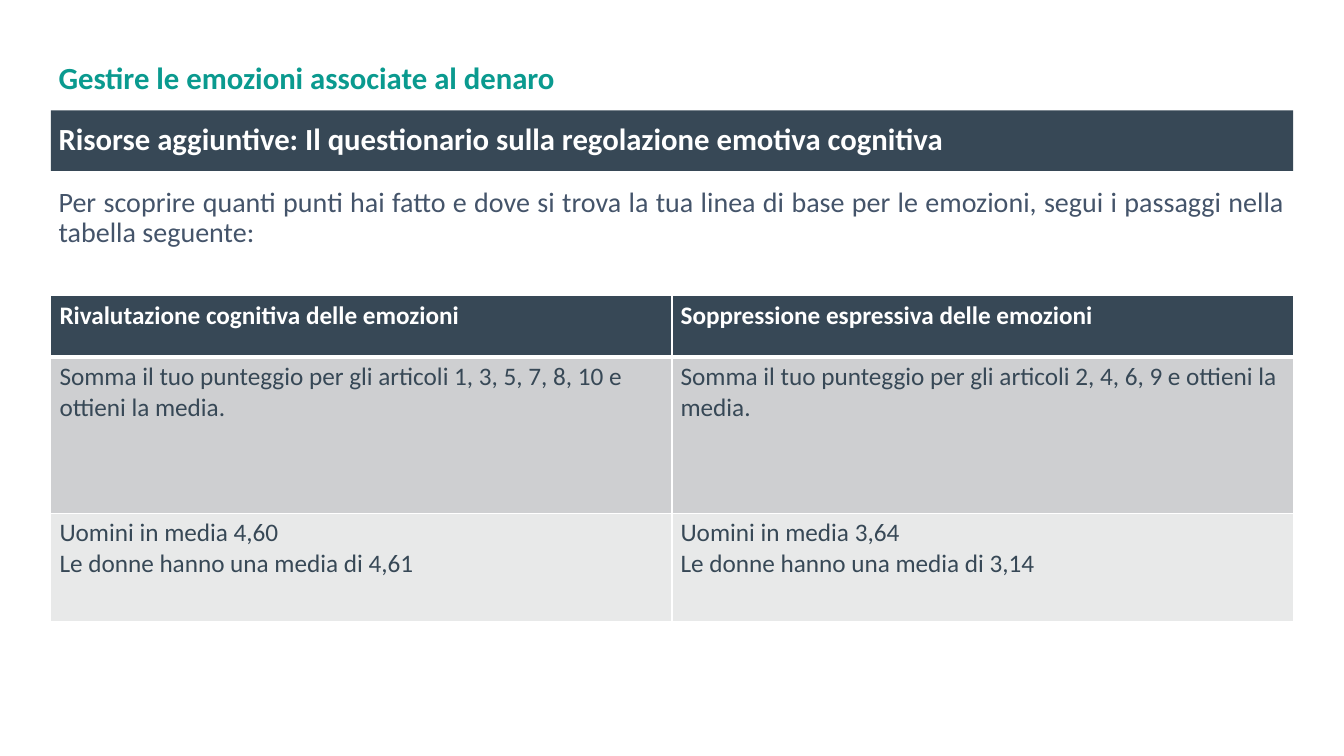
from dataclasses import dataclass
from typing import Optional

from lxml.etree import SubElement
from pptx import Presentation
from pptx.dml.color import RGBColor
from pptx.enum.shapes import MSO_SHAPE as Shape
from pptx.enum.text import MSO_ANCHOR as Anchor, PP_ALIGN as Align
from pptx.oxml.ns import qn
from pptx.util import Pt

PX = 9525
SLIDE_WIDTH, SLIDE_HEIGHT = 1400, 788
FONT = "Calibri"
WHITE = RGBColor(0xFF, 0xFF, 0xFF)
SLATE = RGBColor(0x37, 0x48, 0x56)
TEAL = RGBColor(0x0A, 0x9A, 0x8F)
BLUE_GREY = RGBColor(0x44, 0x54, 0x6A)
MID_GREY = RGBColor(0xCE, 0xCF, 0xD1)
LIGHT_GREY = RGBColor(0xE8, 0xE9, 0xE9)

LEFT, WIDTH = 53, 1294
TABLE_TOP = 308
BLOCK_MARGIN, CELL_MARGIN, MARGIN_Y = 8, 9, 5
CELL_SIZE = 19.7


@dataclass(frozen=True)
class TextStyle:
    size: float
    color: RGBColor
    bold: bool = False


@dataclass(frozen=True)
class Block:
    text: str
    top: int
    height: int
    style: TextStyle
    align: Align = Align.JUSTIFY
    anchor: Anchor = Anchor.MIDDLE
    fill: Optional[RGBColor] = None
    space_after: float = 0


@dataclass(frozen=True)
class Row:
    cells: tuple[str, ...]
    height: int
    fill: RGBColor
    style: TextStyle
    bottom_border: float = 1


CELL_STYLE = TextStyle(CELL_SIZE, SLATE)

BLOCKS = (
    Block("Per scoprire quanti punti hai fatto e dove si trova la tua linea di base "
          "per le emozioni, segui i passaggi nella tabella seguente:",
          191, 539, TextStyle(21.9, BLUE_GREY), anchor=Anchor.TOP, space_after=6),
    Block("Gestire le emozioni associate al denaro",
          45, 76, TextStyle(24, TEAL, True), align=Align.LEFT),
    Block("Risorse aggiuntive: Il questionario sulla regolazione emotiva cognitiva",
          115, 63, TextStyle(24, WHITE, True), fill=SLATE),
)

ROWS = (
    Row(("Rivalutazione cognitiva delle emozioni",
         "Soppressione espressiva delle emozioni"),
        64, SLATE, TextStyle(CELL_SIZE, WHITE, True), bottom_border=3),
    Row(("Somma il tuo punteggio per gli articoli 1, 3, 5, 7, 8, 10 e ottieni la media.",
         "Somma il tuo punteggio per gli articoli 2, 4, 6, 9 e ottieni la media."),
        163, MID_GREY, CELL_STYLE),
    Row(("Uomini in media 4,60\nLe donne hanno una media di 4,61",
         "Uomini in media 3,64\nLe donne hanno una media di 3,14"),
        113, LIGHT_GREY, CELL_STYLE),
)


def set_margins(holder, side: int) -> None:
    """Set the inner margins of a text frame or a table cell."""
    holder.margin_left = holder.margin_right = side * PX
    holder.margin_top = holder.margin_bottom = MARGIN_Y * PX


def add_text(paragraph, text: str, style: TextStyle) -> None:
    """Add one styled run per line of text."""
    for index, line in enumerate(text.split("\n")):
        if index:
            paragraph.add_line_break()
        run = paragraph.add_run()
        run.text = line
        run.font.name = FONT
        run.font.size = Pt(style.size)
        run.font.bold = style.bold
        run.font.color.rgb = style.color


def draw_block(slide, block: Block) -> None:
    """Draw a text block, on a filled rectangle when it has a fill."""
    box = (LEFT * PX, block.top * PX, WIDTH * PX, block.height * PX)
    if block.fill is None:
        shape = slide.shapes.add_textbox(*box)
    else:
        shape = slide.shapes.add_shape(Shape.RECTANGLE, *box)
        shape.shadow.inherit = False
        shape.fill.solid()
        shape.fill.fore_color.rgb = block.fill
        shape.line.fill.background()
    frame = shape.text_frame
    frame.word_wrap = True
    frame.vertical_anchor = block.anchor
    set_margins(frame, BLOCK_MARGIN)
    paragraph = frame.paragraphs[0]
    paragraph.alignment = block.align
    paragraph.line_spacing = 0.9
    paragraph.space_after = Pt(block.space_after)
    add_text(paragraph, block.text, block.style)


def set_borders(cell, widths: dict[str, float]) -> None:
    """Draw white borders ahead of the cell fill."""
    properties = cell._tc.get_or_add_tcPr()
    for side, width in widths.items():
        line = SubElement(properties, qn(f"a:{side}"), w=str(Pt(width)))
        fill = SubElement(line, qn("a:solidFill"))
        SubElement(fill, qn("a:srgbClr"), val=str(WHITE))


def draw_table(slide, rows: tuple[Row, ...]) -> None:
    """Draw the scoring table with equal columns."""
    columns = len(rows[0].cells)
    height = sum(row.height for row in rows)
    table = slide.shapes.add_table(len(rows), columns, LEFT * PX, TABLE_TOP * PX,
                                   WIDTH * PX, height * PX).table
    top_border = 1
    for row_index, row in enumerate(rows):
        table.rows[row_index].height = row.height * PX
        for column_index, text in enumerate(row.cells):
            cell = table.cell(row_index, column_index)
            set_margins(cell, CELL_MARGIN)
            set_borders(cell, {"lnL": 1, "lnR": 1, "lnT": top_border,
                               "lnB": row.bottom_border})
            cell.fill.solid()
            cell.fill.fore_color.rgb = row.fill
            add_text(cell.text_frame.paragraphs[0], text, row.style)
        top_border = row.bottom_border


def main() -> None:
    """Build the slide and save it."""
    presentation = Presentation()
    presentation.slide_width = SLIDE_WIDTH * PX
    presentation.slide_height = SLIDE_HEIGHT * PX
    slide = presentation.slides.add_slide(presentation.slide_layouts[6])
    for block in BLOCKS:
        draw_block(slide, block)
    draw_table(slide, ROWS)
    presentation.save("out.pptx")


if __name__ == "__main__":
    main()
